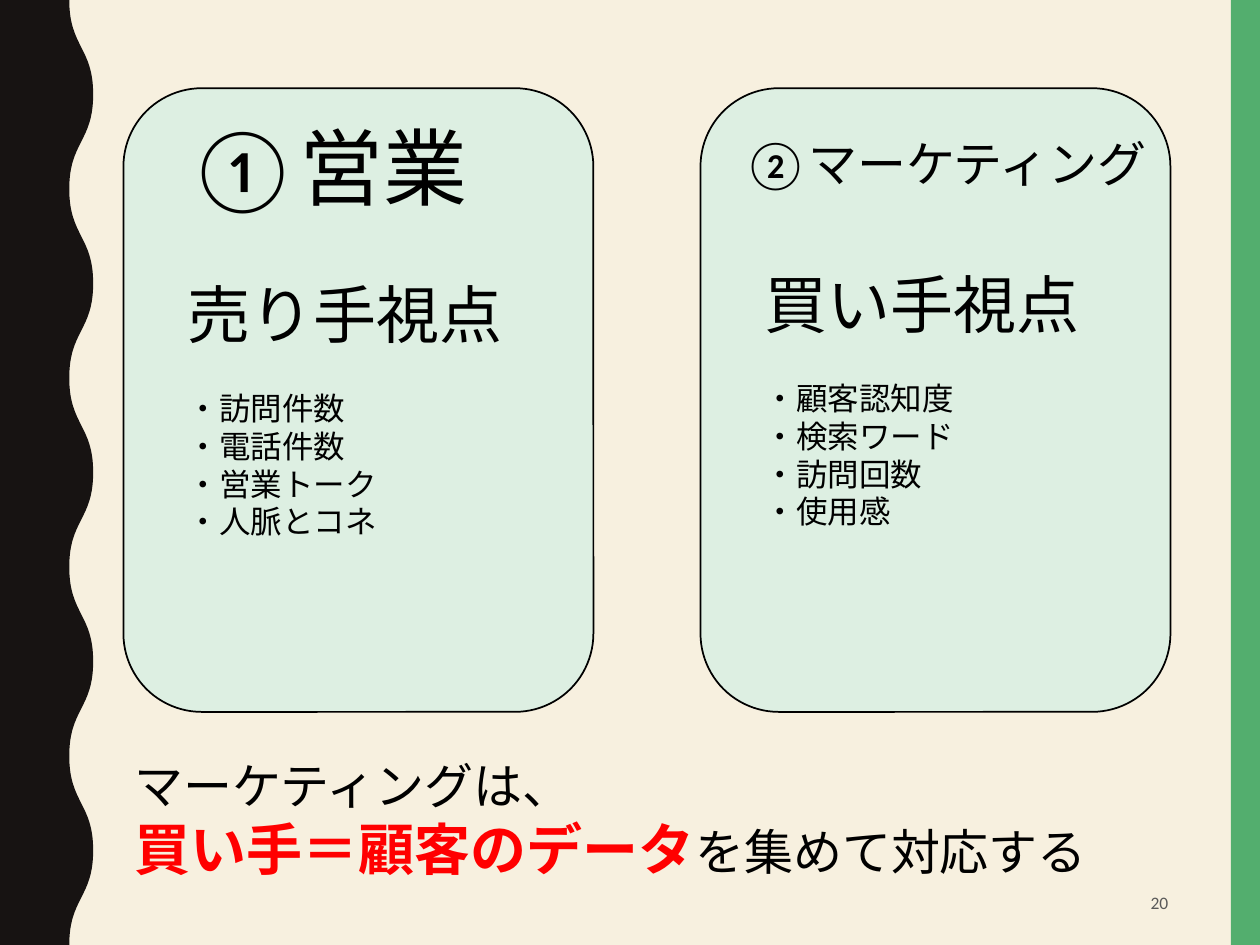
"""Build a slide comparing the seller's and the buyer's point of view."""
from typing import NamedTuple

from lxml.etree import SubElement
from pptx import Presentation
from pptx.dml.color import RGBColor
from pptx.enum.lang import MSO_LANGUAGE_ID
from pptx.enum.shapes import MSO_SHAPE
from pptx.enum.text import MSO_ANCHOR, MSO_AUTO_SIZE, PP_ALIGN
from pptx.oxml.ns import qn
from pptx.util import Inches, Pt

FONT = "Calibri"
BLACK, RED, GRAY = "000000", "FF0000", "595959"
CREAM, GREEN, MINT, DARK = "F7F0DF", "53AE6E", "DDEFE2", "171312"
WIDTH, HEIGHT = 10, 7.5
PANEL_TOP, PANEL_WIDTH, PANEL_HEIGHT = 0.7, 3.73, 4.95
WAVE_INNER, WAVE_OUTER, HALF_WAVE = 0.55, 0.74, 0.75


class Box(NamedTuple):
    left: float
    top: float
    width: float
    height: float


class Run(NamedTuple):
    text: str
    size: float
    color: str = BLACK
    bold: bool = False


class Line(NamedTuple):
    runs: list[Run]
    space_before: float = 0


class Panel(NamedTuple):
    left: float
    heading: Run
    heading_box: Box
    viewpoint: str
    viewpoint_box: Box
    points: list[str]


PANELS = [
    Panel(0.98, Run("①営業", 48), Box(1.39, 0.87, 2.65, 0.91),
          "売り手視点", Box(1.39, 2.14, 3.11, 2.22),
          ["訪問件数", "電話件数", "営業トーク", "人脈とコネ"]),
    Panel(5.56, Run("②マーケティング", 28), Box(5.8, 1.01, 3.45, 0.57),
          "買い手視点", Box(5.97, 2.06, 3.11, 2.22),
          ["顧客認知度", "検索ワード", "訪問回数", "使用感"]),
]
CONCLUSION = [
    Line([Run("マーケティングは、", 28)]),
    Line([Run("買い手＝顧客のデータ", 32, RED, True), Run("を集めて対応する", 28)]),
]


def rgb(color: str) -> RGBColor:
    return RGBColor.from_string(color)


def paint(shape, fill: str, outline: str | None = None) -> None:
    shape.shadow.inherit = False
    shape.fill.solid()
    shape.fill.fore_color.rgb = rgb(fill)
    if outline:
        shape.line.color.rgb = rgb(outline)
        shape.line.width = Pt(1)
    else:
        shape.line.fill.background()


def add_block(slide, kind: MSO_SHAPE, box: Box, fill: str, outline: str | None = None) -> None:
    paint(slide.shapes.add_shape(kind, *map(Inches, box)), fill, outline)


def add_wave(slide) -> None:
    half_waves = round(HEIGHT / HALF_WAVE)
    edge = [(Inches(WAVE_OUTER if half % 2 else WAVE_INNER), Inches(half * HALF_WAVE))
            for half in range(half_waves + 1)]
    builder = slide.shapes.build_freeform(*edge[0])
    builder.add_line_segments([*edge[1:], (0, Inches(HEIGHT)), (0, 0)])
    wave = builder.convert_to_shape()
    segments = list(wave.element.iter(qn("a:lnTo")))[:half_waves]
    for segment, (start_x, start_y), (end_x, end_y) in zip(segments, edge, edge[1:]):
        middle = (start_y + end_y) // 2
        segment.tag = qn("a:cubicBezTo")
        segment.clear()
        for x, y in ((start_x, middle), (end_x, middle), (end_x, end_y)):
            SubElement(segment, qn("a:pt"), x=str(x), y=str(y))
    paint(wave, DARK)


def add_run(paragraph, part: Run) -> None:
    run = paragraph.add_run()
    run.text = part.text
    run.font.color.rgb = rgb(part.color)
    font_format = {"name": FONT, "size": Pt(part.size), "bold": part.bold,
                   "language_id": MSO_LANGUAGE_ID.JAPANESE}
    for name, value in font_format.items():
        setattr(run.font, name, value)
    SubElement(run.font._element, qn("a:ea"), typeface=FONT)


def add_text(slide, box: Box, lines: list[Line], align: PP_ALIGN = PP_ALIGN.LEFT,
             **frame_format) -> None:
    frame = slide.shapes.add_textbox(*map(Inches, box)).text_frame
    settings = {"word_wrap": True, "auto_size": MSO_AUTO_SIZE.SHAPE_TO_FIT_TEXT} | frame_format
    for name, value in settings.items():
        setattr(frame, name, value)
    for index, line in enumerate(lines):
        paragraph = frame.add_paragraph() if index else frame.paragraphs[0]
        paragraph.alignment = align
        if line.space_before:
            paragraph.space_before = Pt(line.space_before)
        for part in line.runs:
            add_run(paragraph, part)


def add_panel_text(slide, panel: Panel) -> None:
    add_text(slide, panel.heading_box, [Line([panel.heading])])
    points = [Line([Run(f"・{point}", 18)], 0 if index else 21.5)
              for index, point in enumerate(panel.points)]
    add_text(slide, panel.viewpoint_box, [Line([Run(panel.viewpoint, 36)]), *points])


def main() -> None:
    deck = Presentation()
    deck.slide_width, deck.slide_height = Inches(WIDTH), Inches(HEIGHT)
    slide = deck.slides.add_slide(deck.slide_layouts[6])
    slide.background.fill.solid()
    slide.background.fill.fore_color.rgb = rgb(CREAM)

    add_block(slide, MSO_SHAPE.RECTANGLE, Box(9.77, 0, 0.23, HEIGHT), GREEN)
    add_wave(slide)
    for panel in PANELS:
        add_block(slide, MSO_SHAPE.ROUNDED_RECTANGLE,
                  Box(panel.left, PANEL_TOP, PANEL_WIDTH, PANEL_HEIGHT), MINT, BLACK)
        add_panel_text(slide, panel)
    add_text(slide, Box(0.97, 5.95, 8.69, 1.11), CONCLUSION)
    add_text(slide, Box(7.06, 6.97, 2.31, 0.38), [Line([Run("20", 10, GRAY)])],
             PP_ALIGN.RIGHT, auto_size=MSO_AUTO_SIZE.NONE, vertical_anchor=MSO_ANCHOR.MIDDLE)
    deck.save("out.pptx")


if __name__ == "__main__":
    main()
